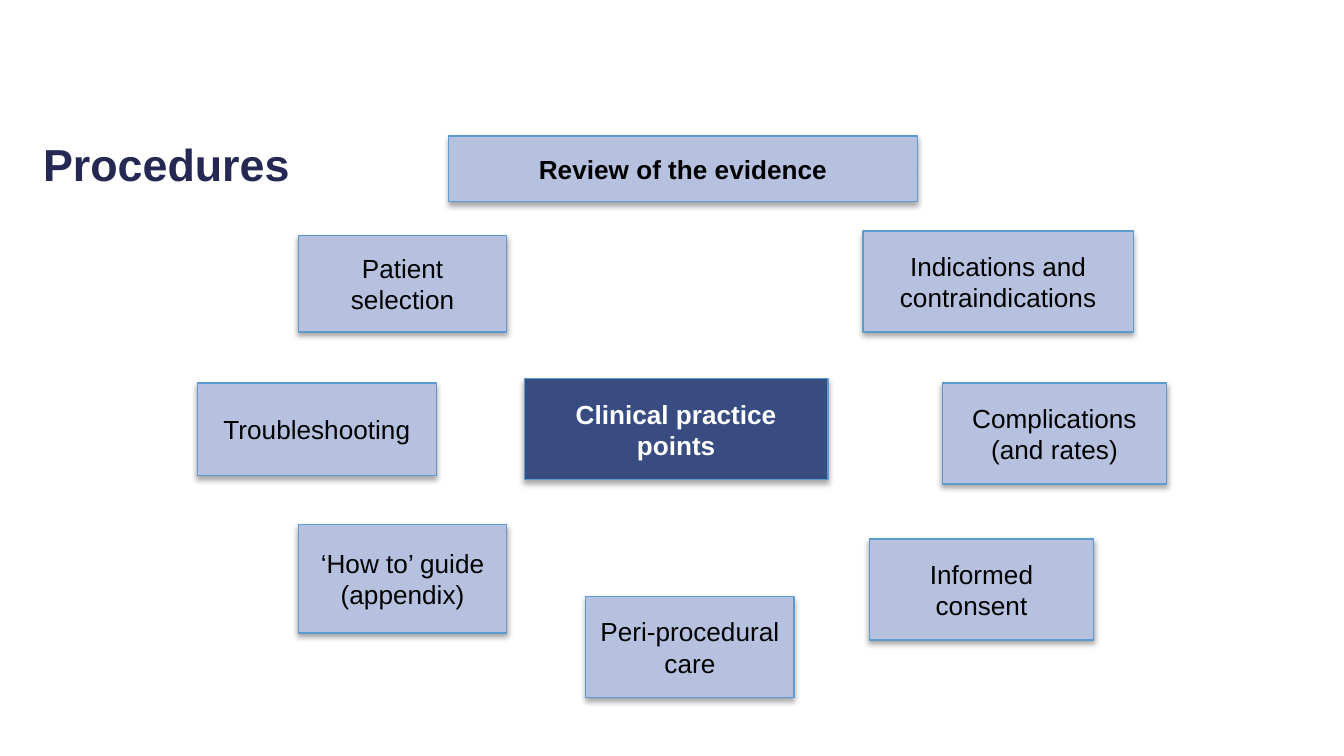
"""Build a slide of procedure topics arranged around the clinical practice points."""
from lxml.etree import SubElement
from pptx import Presentation
from pptx.dml.color import RGBColor
from pptx.enum.shapes import MSO_SHAPE as Preset
from pptx.enum.text import MSO_ANCHOR as Anchor, MSO_AUTO_SIZE as AutoSize, PP_ALIGN as Align
from pptx.oxml.ns import qn
from pptx.util import Cm, Pt

NAVY = RGBColor(0x24, 0x28, 0x52)
DARK_BLUE = RGBColor(0x38, 0x4C, 0x81)
PALE_BLUE = RGBColor(0xB5, 0xC1, 0xDF)
EDGE_BLUE = RGBColor(0x5D, 0x9A, 0xCF)
BLACK = RGBColor(0, 0, 0)
WHITE = RGBColor(0xFF, 0xFF, 0xFF)

HEADING = "Procedures"
HEADING_AREA = (0.56, 2.46, 15.42, 3)
EVIDENCE = ("Review of the evidence", (8.48, 2.57, 8.86, 1.24))
HUB = ("Clinical practice points", (9.91, 7.16, 5.74, 1.91))
TOPICS = [
    ("Indications and contraindications", (16.31, 4.37, 5.11, 1.91)),
    ("Complications (and rates)", (17.81, 7.24, 4.24, 1.91)),
    ("Informed consent", (16.43, 10.19, 4.24, 1.91)),
    ("Peri-procedural care", (11.07, 11.28, 3.94, 1.91)),
    ("‘How to’ guide (appendix)", (5.64, 9.91, 3.94, 2.06)),
    ("Troubleshooting", (3.73, 7.24, 4.52, 1.75)),
    ("Patient selection", (5.64, 4.45, 3.94, 1.83)),
]


def write(shape, text, *, size=14, color=BLACK, bold=False, align=Align.CENTER, anchor=Anchor.MIDDLE):
    """Put formatted text in a shape."""
    frame = shape.text_frame
    frame.word_wrap = True
    frame.auto_size = AutoSize.NONE
    frame.vertical_anchor = anchor
    paragraph = frame.paragraphs[0]
    paragraph.alignment = align
    run = paragraph.add_run()
    run.text = text
    font = run.font
    font.name, font.size, font.bold = "Arial", Pt(size), bold
    font.color.rgb = color


def cast_shadow(shape):
    """Give a shape a soft shadow below it."""
    shape.shadow.inherit = False
    effects = shape.element.spPr.find(qn("a:effectLst"))
    shadow = SubElement(effects, qn("a:outerShdw"), blurRad=str(Pt(3.1)), dist=str(Pt(1.8)),
                        dir="5400000", rotWithShape="0")
    tint = SubElement(shadow, qn("a:srgbClr"), val="000000")
    SubElement(tint, qn("a:alpha"), val="35000")


def add_box(slide, text, area, *, fill=PALE_BLUE, **text_format):
    """Draw one labelled box."""
    box = slide.shapes.add_shape(Preset.RECTANGLE, *map(Cm, area))
    box.fill.solid()
    box.fill.fore_color.rgb = fill
    box.line.color.rgb = EDGE_BLUE
    box.line.width = Pt(0.75)
    cast_shadow(box)
    write(box, text, **text_format)


def main():
    """Build and save the slide."""
    deck = Presentation()
    deck.slide_width, deck.slide_height = Cm(25.4), Cm(14.29)
    slide = deck.slides.add_slide(deck.slide_layouts[5])

    heading = slide.shapes.title
    heading.left, heading.top, heading.width, heading.height = map(Cm, HEADING_AREA)
    write(heading, HEADING, size=24, color=NAVY, bold=True, align=Align.LEFT, anchor=Anchor.TOP)

    add_box(slide, *EVIDENCE, bold=True)
    add_box(slide, *HUB, fill=DARK_BLUE, color=WHITE, bold=True)
    for topic, area in TOPICS:
        add_box(slide, topic, area)

    deck.save("out.pptx")


if __name__ == "__main__":
    main()
